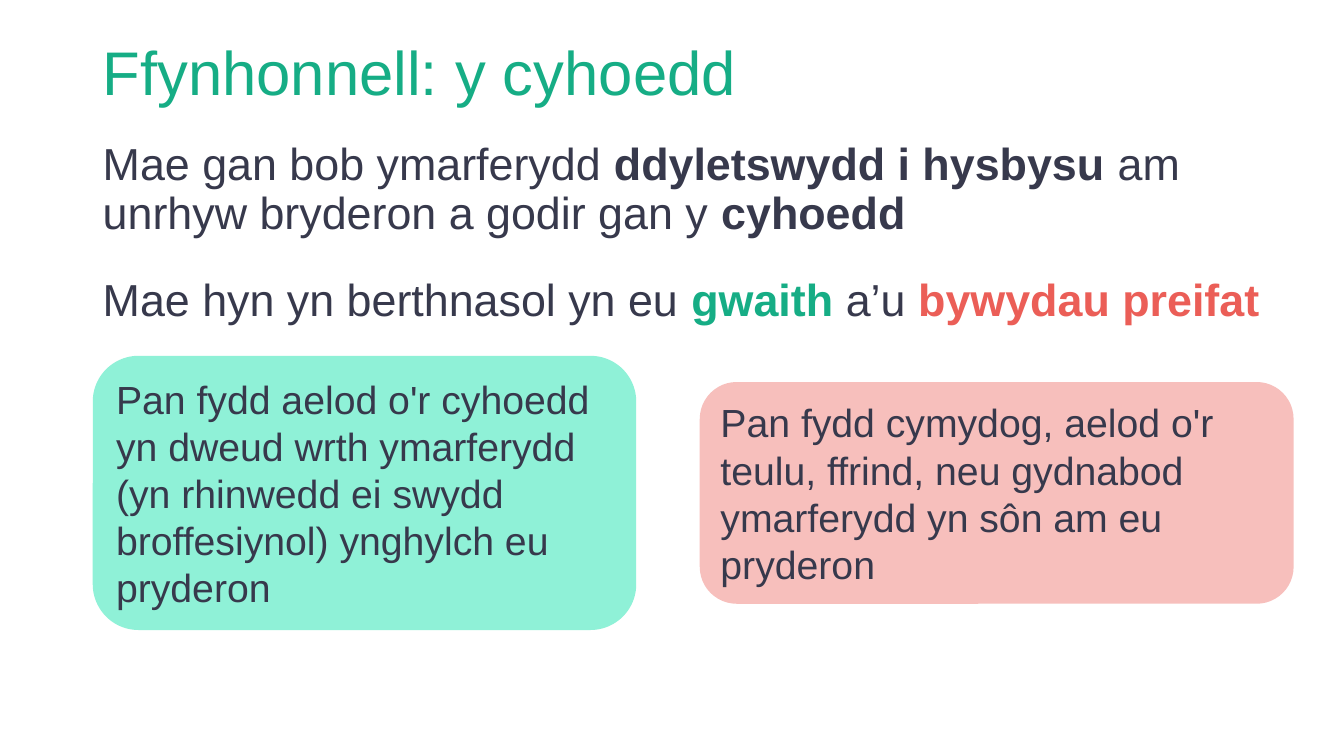
"""Build the slide on concerns raised by members of the public."""
from pptx import Presentation
from pptx import util as u
from pptx.dml.color import RGBColor
from pptx.enum import shapes, text

HUES = {"ink": "37394C", "green": "16AD85", "red": "EB5E57",
        "mint": "8FF1D7", "pink": "F7BFBC"}
WIDE, HIGH = 13.33, 7.5
LEFT, RIGHT = 0.92, 12.84


def hue(name):
    return RGBColor.from_string(HUES[name])


def style(para, size, color="ink"):
    para.alignment = text.PP_ALIGN.LEFT
    para.font.name = "Arial"
    para.font.size = u.Pt(size)
    para.font.color.rgb = hue(color)


deck = Presentation()
deck.slide_width, deck.slide_height = u.Inches(WIDE), u.Inches(HIGH)
slide = deck.slides.add_slide(deck.slide_layouts[6])

title = slide.shapes.add_textbox(
    *map(u.Inches, (LEFT, 0.02, 11.5, 1.45))).text_frame
title.word_wrap = True
title.vertical_anchor = text.MSO_ANCHOR.MIDDLE
head = title.paragraphs[0]
head.text = "Ffynhonnell: y cyhoedd"
head.line_spacing = 0.9
style(head, 44, "green")

duties = [
    [("Mae gan bob ymarferydd ", None), ("ddyletswydd i hysbysu ", "ink"),
     ("am unrhyw bryderon a godir gan y", None), (" cyhoedd", "ink")],
    [("Mae hyn yn berthnasol yn eu ", None), ("gwaith", "green"),
     (" a’u ", None), ("bywydau preifat", "red")],
]
body = slide.shapes.add_textbox(
    *map(u.Inches, (LEFT, 1.36, RIGHT - LEFT, 2.2))).text_frame
body.word_wrap = True
for row, parts in enumerate(duties):
    para = body.add_paragraph() if row else body.paragraphs[0]
    para.line_spacing = 0.9
    if row:
        para.space_before = u.Pt(10)
    else:
        para.space_after = u.Pt(18)
    style(para, 32)
    for words, accent in parts:
        run = para.add_run()
        run.text = words
        run.font.name = "Arial"
        run.font.size = u.Pt(32)
        run.font.bold = accent is not None
        run.font.color.rgb = hue(accent or "ink")

middle = 4.89
cards = [
    (LEFT, 5.39, 2.72, "mint",
     "Pan fydd aelod o'r cyhoedd yn dweud wrth ymarferydd\n"
     "(yn rhinwedd ei swydd broffesiynol) ynghylch eu pryderon"),
    (6.94, 5.89, 2.2, "pink",
     "Pan fydd cymydog, aelod o'r teulu, ffrind, neu gydnabod "
     "ymarferydd yn sôn am eu pryderon"),
]
for left, width, height, fill, words in cards:
    card = slide.shapes.add_shape(
        shapes.MSO_SHAPE.ROUNDED_RECTANGLE,
        *map(u.Inches, (left, middle - height / 2, width, height)))
    card.shadow.inherit = False
    card.fill.solid()
    card.fill.fore_color.rgb = hue(fill)
    card.line.fill.background()
    frame = card.text_frame
    frame.word_wrap = True
    frame.vertical_anchor = text.MSO_ANCHOR.MIDDLE
    frame.paragraphs[0].text = words
    style(frame.paragraphs[0], 28)

deck.save("out.pptx")
